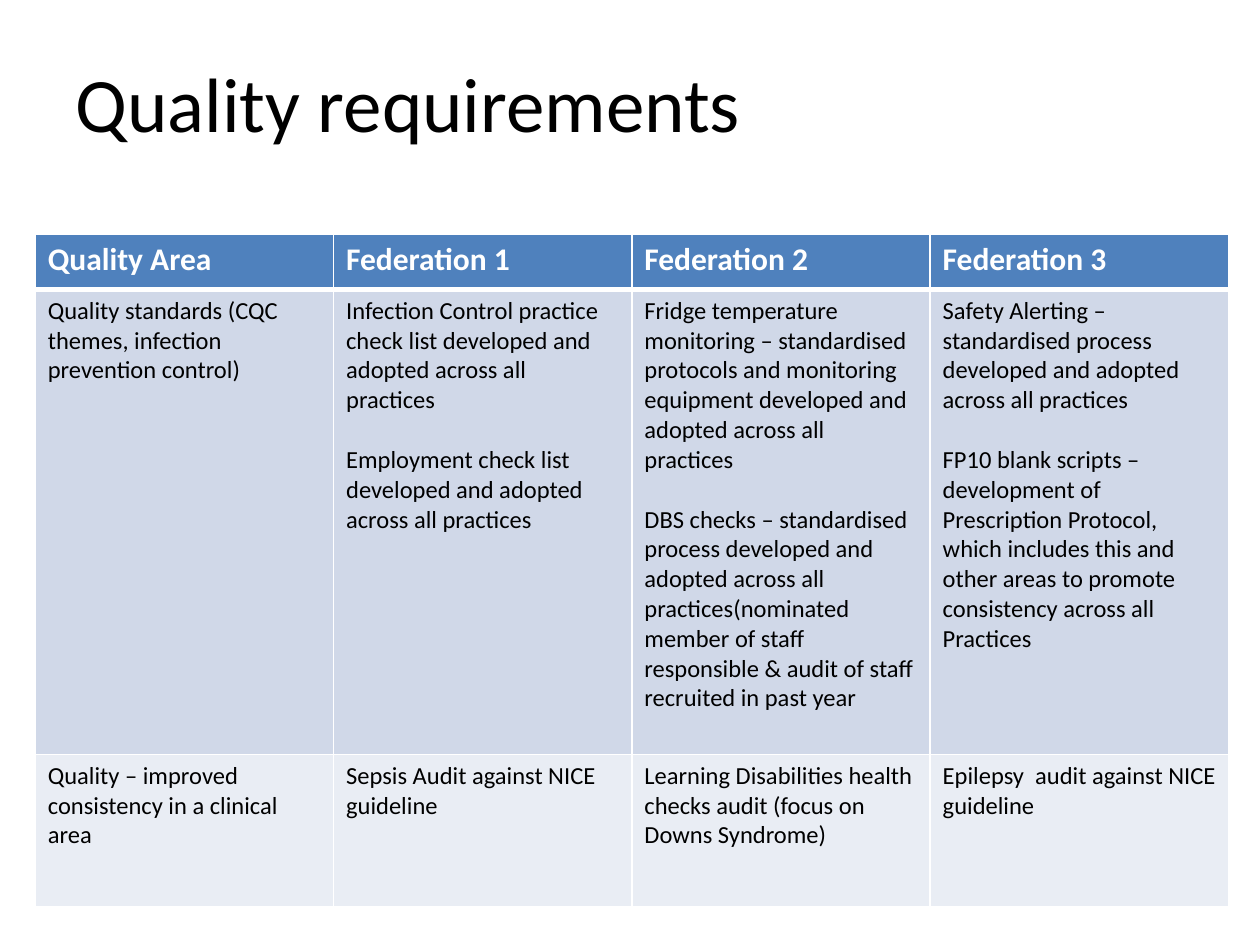
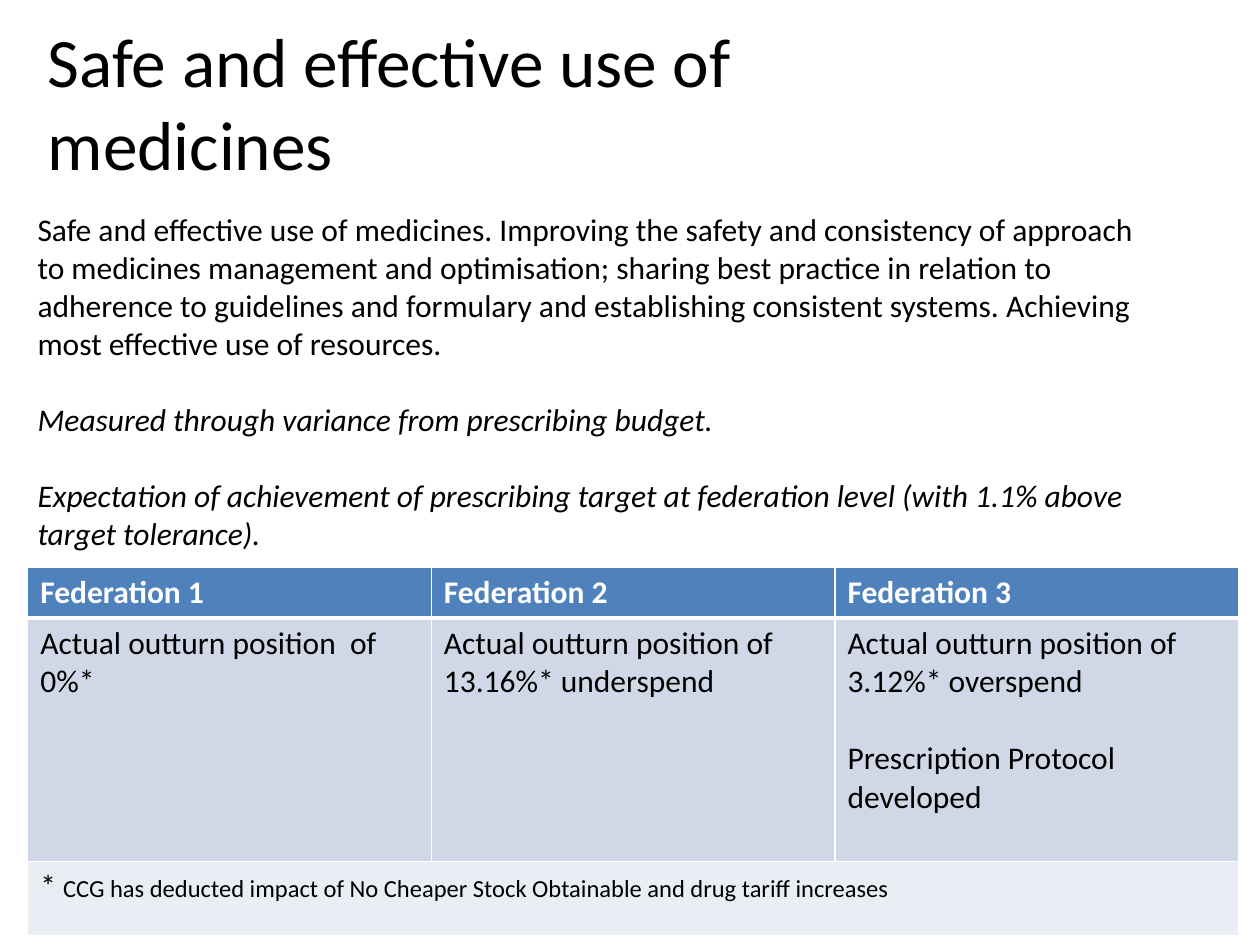
from dataclasses import dataclass

from lxml import etree
from pptx import Presentation
from pptx.dml.color import RGBColor
from pptx.enum.text import MSO_ANCHOR, MSO_AUTO_SIZE, PP_ALIGN
from pptx.oxml.ns import qn
from pptx.util import Inches, Pt

MIDDLE = MSO_ANCHOR.MIDDLE
NO_AUTOFIT = MSO_AUTO_SIZE.NONE
LEFT = PP_ALIGN.LEFT

FONT = "Calibri"
BLACK, WHITE = "000000", "FFFFFF"
HEADER_FILL = "4F81BD"
BAND_FILLS = ("D0D8E8", "E9EDF4")
HEADER_SIZE = 18
NOTE_SIZE = 14
LINE_HEIGHT = 1.22
TITLE_LAYOUT = 5


@dataclass(frozen=True)
class Box:
    left: float
    top: float
    width: float
    height: float

    def lengths(self) -> tuple:
        return tuple(map(Inches, (self.left, self.top, self.width, self.height)))


@dataclass(frozen=True)
class ComparisonTable:
    box: Box
    row_heights: tuple
    headers: tuple
    body: tuple
    body_size: float


def color(hex_value: str) -> RGBColor:
    return RGBColor.from_string(hex_value)


def style_run(run, size: float, hex_value: str = BLACK, bold: bool = False,
              italic: bool = False) -> None:
    font = run.font
    font.name, font.size = FONT, Pt(size)
    font.bold, font.italic = bold, italic
    font.color.rgb = color(hex_value)


def write_paragraphs(frame, texts: tuple, size: float, hex_value: str = BLACK,
                     bold: bool = False, italic_from: int = 99) -> None:
    frame.text = "\n".join(texts)
    for index, paragraph in enumerate(frame.paragraphs):
        if index:
            paragraph.space_before = Pt(round(size * LINE_HEIGHT))
        for run in paragraph.runs:
            style_run(run, size, hex_value, bold, index >= italic_from)


def add_titled_slide(deck, title: str, box: Box, size: float):
    slide = deck.slides.add_slide(deck.slide_layouts[TITLE_LAYOUT])
    heading = slide.shapes.title
    heading.left, heading.top, heading.width, heading.height = box.lengths()
    frame = heading.text_frame
    frame.word_wrap = True
    frame.auto_size = NO_AUTOFIT
    frame.vertical_anchor = MIDDLE
    write_paragraphs(frame, (title,), size)
    frame.paragraphs[0].alignment = LEFT
    return slide


def add_borders(cell, bottom: float, top: float) -> None:
    properties = cell._tc.get_or_add_tcPr()
    for side, width in (("L", 1), ("R", 1), ("T", top), ("B", bottom)):
        line = etree.SubElement(properties, qn(f"a:ln{side}"), w=str(Pt(width)))
        fill = etree.SubElement(line, qn("a:solidFill"))
        etree.SubElement(fill, qn("a:srgbClr"), val=WHITE)


def add_comparison(slide, spec: ComparisonTable):
    columns = len(spec.headers)
    table = slide.shapes.add_table(
        len(spec.row_heights), columns, *spec.box.lengths()).table
    for column in table.columns:
        column.width = Inches(spec.box.width / columns)
    for index, (row, height) in enumerate(zip(table.rows, spec.row_heights)):
        row.height = Inches(height)
        is_header = index == 0
        for cell in row.cells:
            add_borders(cell, 3 if is_header else 1, 3 if index == 1 else 1)
            cell.fill.solid()
            cell.fill.fore_color.rgb = color(
                HEADER_FILL if is_header else BAND_FILLS[(index - 1) % 2])
    for cell, header in zip(table.rows[0].cells, spec.headers):
        write_paragraphs(cell.text_frame, (header,), HEADER_SIZE, WHITE, True)
    for row_index, entries in enumerate(spec.body, 1):
        for cell, texts in zip(table.rows[row_index].cells, entries):
            write_paragraphs(cell.text_frame, texts, spec.body_size)
    return table


def add_table_note(table, row_index: int, mark: str, note: str) -> None:
    cell = table.cell(row_index, 0)
    cell.merge(table.cell(row_index, len(table.columns) - 1))
    write_paragraphs(cell.text_frame, (mark,), HEADER_SIZE)
    note_run = cell.text_frame.paragraphs[0].add_run()
    note_run.text = note
    style_run(note_run, NOTE_SIZE)


FEDERATIONS = tuple(f"Federation {number}" for number in range(1, 4))

QUALITY = ComparisonTable(
    box=Box(0.28, 1.86, 9.47, 5.34),
    row_heights=(0.44, 3.69, 1.21),
    headers=("Quality Area", *FEDERATIONS),
    body_size=14,
    body=(
        (
            ("Quality standards (CQC themes, infection prevention control)",),
            ("Infection Control practice check list developed and adopted "
             "across all practices",
             "Employment check list developed and adopted across all practices"),
            ("Fridge temperature monitoring – standardised protocols and "
             "monitoring equipment developed and adopted across all practices",
             "DBS checks – standardised process developed and adopted across "
             "all practices(nominated member of staff responsible & audit of "
             "staff recruited in past year"),
            ("Safety Alerting – standardised process developed and adopted "
             "across all practices",
             "FP10 blank scripts – development of Prescription Protocol, which "
             "includes this and other areas to promote consistency across all "
             "Practices"),
        ),
        (
            ("Quality – improved consistency in a clinical area",),
            ("Sepsis Audit against NICE guideline",),
            ("Learning Disabilities health checks audit (focus on Downs "
             "Syndrome)",),
            ("Epilepsy  audit against NICE guideline",),
        ),
    ),
)

PRESCRIBING = ComparisonTable(
    box=Box(0.22, 4.5, 9.61, 2.92),
    row_heights=(0.4, 1.93, 0.59),
    headers=FEDERATIONS,
    body_size=18,
    body=(
        (
            ("Actual outturn position  of 0%*",),
            ("Actual outturn position of 13.16%* underspend",),
            ("Actual outturn position of 3.12%* overspend",
             "Prescription Protocol developed"),
        ),
    ),
)

MEDICINES_AIMS = (
    "Safe and effective use of medicines. Improving the safety and consistency "
    "of approach to medicines management and optimisation; sharing best "
    "practice in relation to adherence to guidelines and formulary and "
    "establishing consistent systems. Achieving most effective use of "
    "resources.",
    "Measured through variance from prescribing budget.",
    "Expectation of achievement of prescribing target at federation level "
    "(with 1.1% above target tolerance).",
)


def build_quality_slide(deck) -> None:
    slide = add_titled_slide(
        deck, "Quality requirements", Box(0.5, 0.3, 5.6, 1.01), 44)
    add_comparison(slide, QUALITY)


def build_medicines_slide(deck) -> None:
    slide = add_titled_slide(
        deck, "Safe and effective use of medicines",
        Box(0.28, 0.3, 5.83, 1.01), 39.6)
    table = add_comparison(slide, PRESCRIBING)
    add_table_note(
        table, 2, "* ",
        "CCG has deducted impact of No Cheaper Stock Obtainable and drug "
        "tariff increases")
    aims = slide.shapes.add_textbox(*Box(0.2, 1.62, 8.9, 2.85).lengths())
    aims.text_frame.word_wrap = True
    write_paragraphs(aims.text_frame, MEDICINES_AIMS, 18, italic_from=1)


def main() -> None:
    deck = Presentation()
    deck.slide_width, deck.slide_height = Inches(10), Inches(7.5)
    build_quality_slide(deck)
    build_medicines_slide(deck)
    deck.save("out.pptx")


if __name__ == "__main__":
    main()
